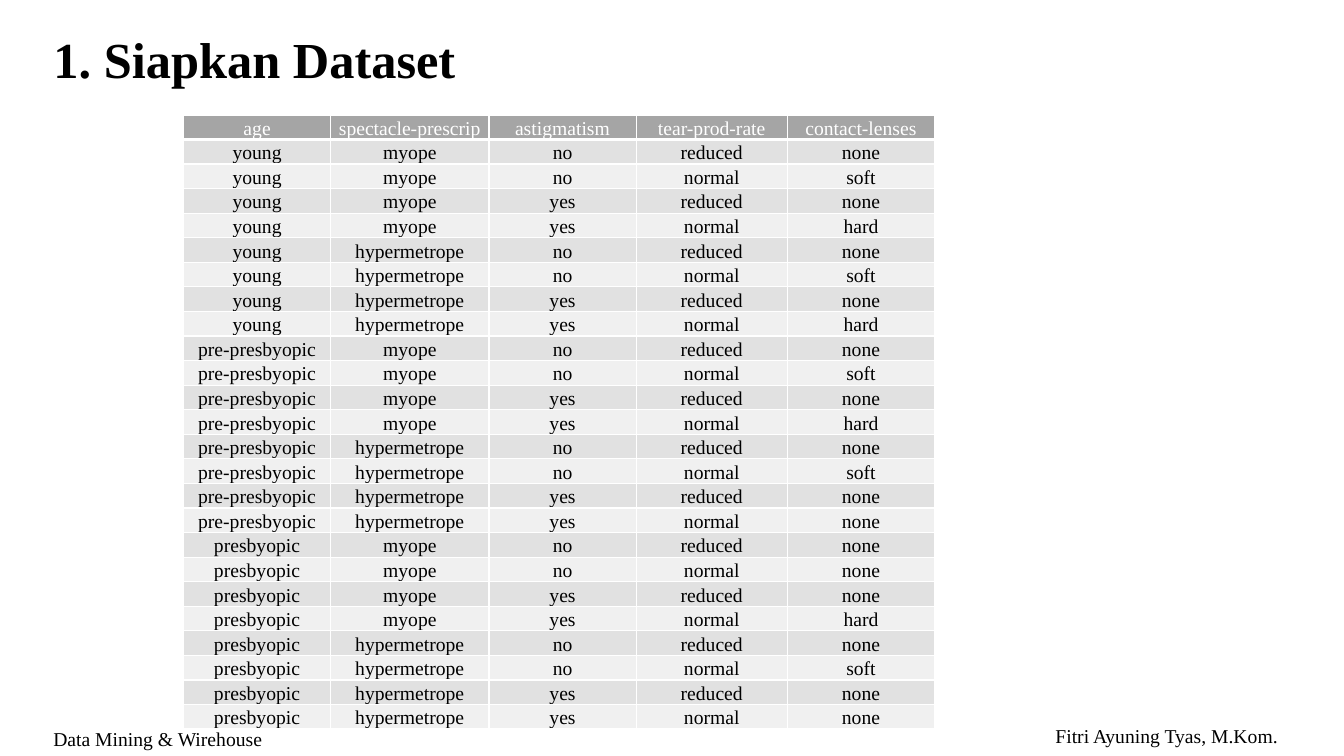
from itertools import product

from lxml.etree import SubElement
from pptx import Presentation
from pptx.dml.color import RGBColor
from pptx.enum.text import MSO_ANCHOR, MSO_AUTO_SIZE, PP_ALIGN
from pptx.oxml.ns import qn
from pptx.util import Inches, Pt

BLACK = RGBColor(0x00, 0x00, 0x00)
WHITE = RGBColor(0xFF, 0xFF, 0xFF)
HEAD = RGBColor(0xA5, 0xA5, 0xA5)
DARK = RGBColor(0xE1, 0xE1, 0xE1)
LIGHT = RGBColor(0xF0, 0xF0, 0xF0)

# Dataset: every mix of the four traits, with the lens each one needs
NAMES = ("age", "spectacle-prescrip", "astigmatism", "tear-prod-rate", "contact-lenses")
SIGHTS = ("myope", "hypermetrope")
LENSES = {
    "young": ("soft", "hard", "soft", "hard"),
    "pre-presbyopic": ("soft", "hard", "soft", "none"),
    "presbyopic": ("none", "hard", "soft", "none"),
}
WIDTHS = (1.46, 1.57, 1.46, 1.5, 1.46)


def dataset():
    rows = [NAMES]
    for age, lenses in LENSES.items():
        eyes = product(SIGHTS, ("no", "yes"))
        for (sight, astig), lens in zip(eyes, lenses):
            rows.append((age, sight, astig, "reduced", "none"))
            rows.append((age, sight, astig, "normal", lens))
    return rows


class Deck:
    """Holds the text style and the current slide."""

    font = "Times New Roman"
    size = 14

    def __init__(self):
        self.prs = Presentation()
        self.prs.slide_width = Inches(13.33)
        self.prs.slide_height = Inches(7.5)
        self.slide = self.prs.slides.add_slide(self.prs.slide_layouts[5])

    def text(self, para, words, size=size, color=BLACK, bold=False):
        run = para.add_run()
        run.text = words
        run.font.name = self.font
        run.font.size = Pt(size)
        run.font.bold = bold
        run.font.color.rgb = color

    def title(self, words, left, top, width, height):
        box = self.slide.shapes.title
        box.left, box.top = Inches(left), Inches(top)
        box.width, box.height = Inches(width), Inches(height)
        frame = box.text_frame
        frame.vertical_anchor = MSO_ANCHOR.MIDDLE
        para = frame.paragraphs[0]
        para.alignment = PP_ALIGN.LEFT
        para.line_spacing = 0.9
        self.text(para, words, size=36, bold=True)

    def label(self, words, left, top, width, height):
        box = self.slide.shapes.add_textbox(
            Inches(left), Inches(top), Inches(width), Inches(height))
        frame = box.text_frame
        frame.word_wrap = False
        frame.auto_size = MSO_AUTO_SIZE.SHAPE_TO_FIT_TEXT
        self.text(frame.paragraphs[0], words)

    def table(self, rows, widths, left, top, height):
        grid = self.slide.shapes.add_table(
            len(rows), len(widths), Inches(left), Inches(top),
            Inches(sum(widths)), Inches(height)).table
        for col, width in zip(grid.columns, widths):
            col.width = Inches(width)
        for r, row in enumerate(rows):
            fill = HEAD if r == 0 else DARK if r % 2 else LIGHT
            color = BLACK if r else WHITE
            for c, words in enumerate(row):
                self.cell(grid.cell(r, c), words, fill, color, 1 if r else 3)

    def cell(self, cell, words, fill, color, base):
        cell.margin_left = cell.margin_top = cell.margin_right = Inches(0.01)
        cell.margin_bottom = 0
        cell.vertical_anchor = MSO_ANCHOR.BOTTOM
        self.border(cell, base)
        cell.fill.solid()
        cell.fill.fore_color.rgb = fill
        para = cell.text_frame.paragraphs[0]
        para.alignment = PP_ALIGN.CENTER
        self.text(para, words, color=color)

    def border(self, cell, base):
        props = cell._tc.get_or_add_tcPr()
        for side, width in (("L", 1), ("R", 1), ("T", 1), ("B", base)):
            line = SubElement(props, qn("a:ln" + side), w=str(Pt(width)))
            solid = SubElement(line, qn("a:solidFill"))
            SubElement(solid, qn("a:srgbClr"), val=str(WHITE))


def main():
    deck = Deck()
    # Footer
    deck.label("Fitri Ayuning Tyas, M.Kom.", 10.37, 7.13, 2.47, 0.34)
    deck.label("Data Mining & Wirehouse", 0.43, 7.16, 2.49, 0.34)
    # Title
    deck.title("1. Siapkan Dataset", 0.43, 0.14, 12.4, 0.96)
    # Dataset table
    deck.table(dataset(), WIDTHS, left=1.82, top=1.14, height=6.03)
    deck.prs.save("out.pptx")


if __name__ == "__main__":
    main()
